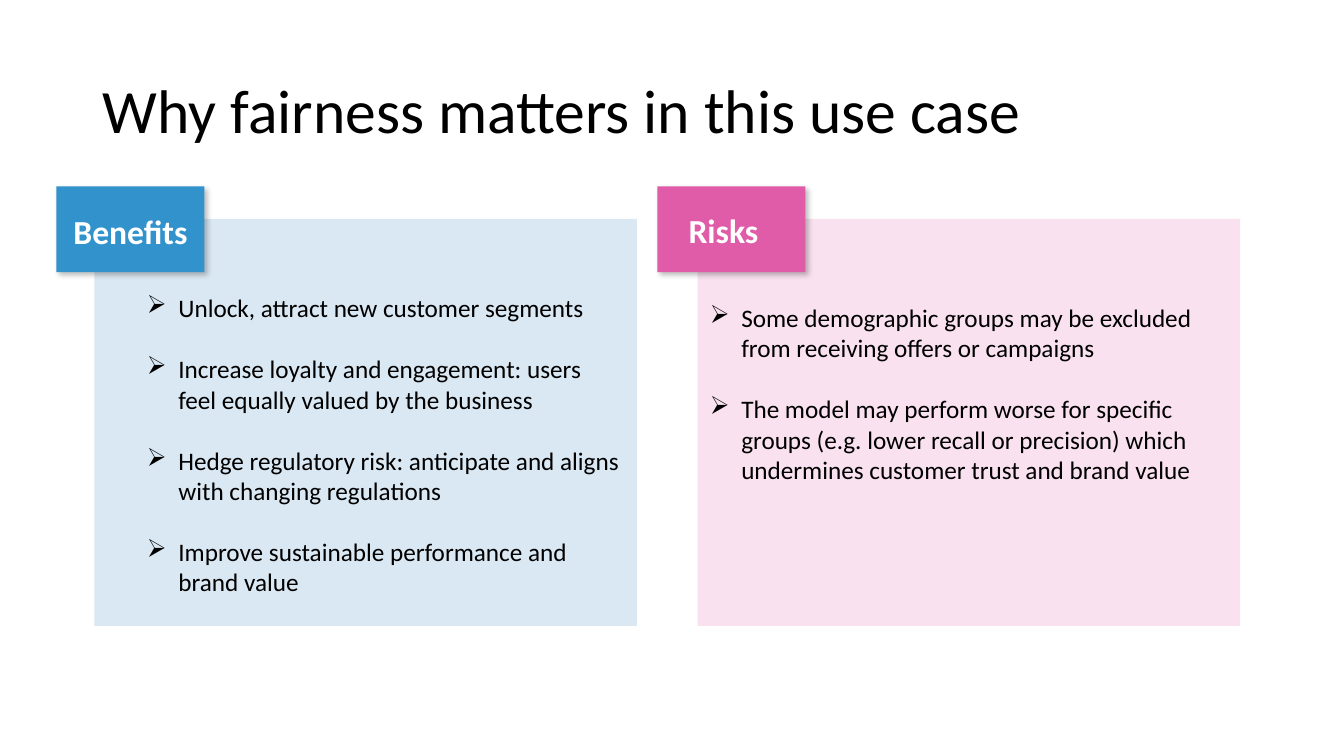
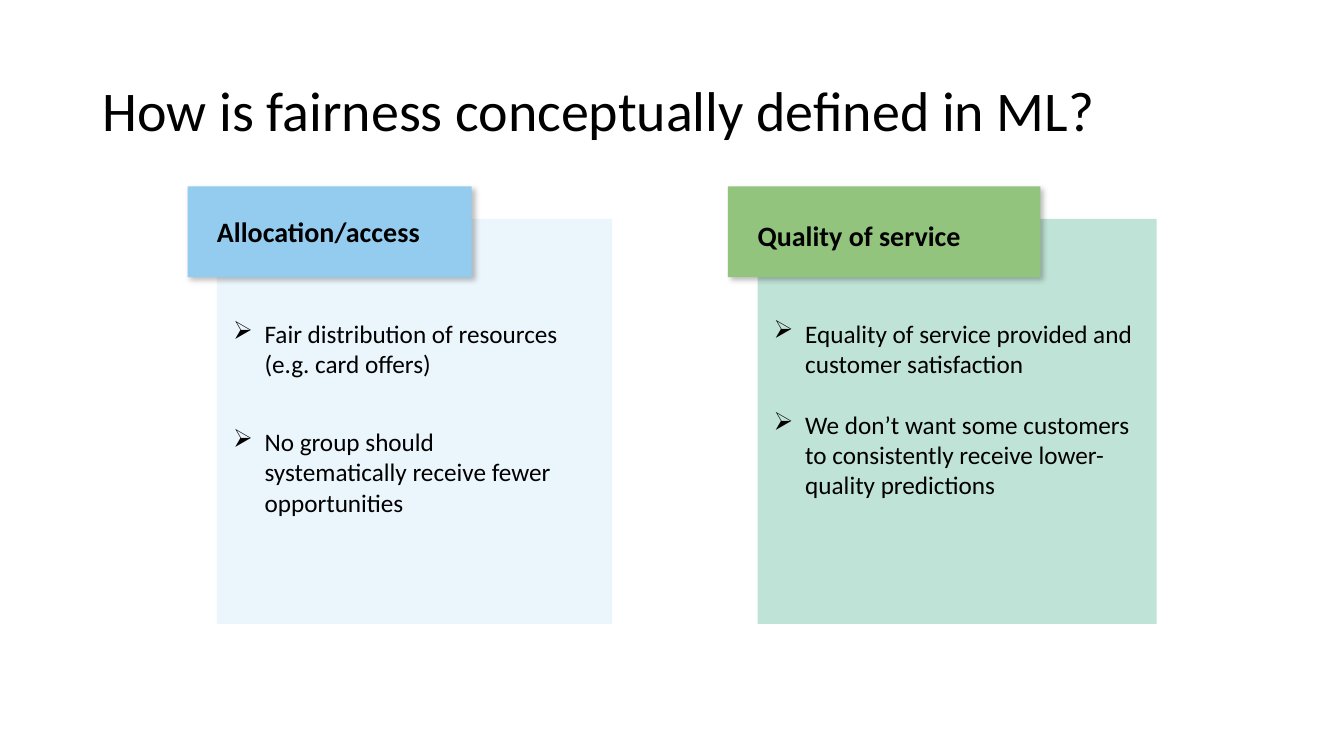
from dataclasses import dataclass

from lxml.etree import SubElement
from pptx import Presentation
from pptx.dml.color import RGBColor
from pptx.enum.shapes import MSO_SHAPE
from pptx.enum.text import MSO_ANCHOR, MSO_AUTO_SIZE, PP_ALIGN
from pptx.oxml.ns import qn
from pptx.util import Pt

FONT = "Calibri"
BLACK, WHITE = "000000", "FFFFFF"
TITLE_BOX = (66.2, 28.8, 845, 104.4)
TAB_TOP, PANEL_TOP = 133.2, 156.3
BULLET_INDENT = 22.5
TITLE_FRAME = {"word_wrap": True, "auto_size": MSO_AUTO_SIZE.NONE,
               "vertical_anchor": MSO_ANCHOR.MIDDLE}
TITLE_PARAGRAPH = {"alignment": PP_ALIGN.LEFT, "line_spacing": 0.9}


@dataclass
class Column:
    label: str
    label_color: str
    label_size: int
    label_offset: tuple
    tab_color: str
    tab_box: tuple
    panel_color: str
    panel_alpha: int
    panel_box: tuple
    points_box: tuple
    points_gap: int
    points: list


def color(hex_value):
    return RGBColor.from_string(hex_value)


def apply(target, values):
    for name, value in values.items():
        setattr(target, name, value)


def style_font(paragraph, size, hex_value=BLACK, bold=False):
    apply(paragraph.font, {"name": FONT, "size": Pt(size), "bold": bold})
    paragraph.font.color.rgb = color(hex_value)


def add_rectangle(slide, box, hex_value, alpha=100):
    rectangle = slide.shapes.add_shape(MSO_SHAPE.RECTANGLE, *map(Pt, box))
    rectangle.fill.solid()
    rectangle.fill.fore_color.rgb = color(hex_value)
    rectangle.line.fill.background()
    rectangle.shadow.inherit = False
    if alpha < 100:
        fill_color = rectangle._element.spPr.find(".//" + qn("a:srgbClr"))
        SubElement(fill_color, qn("a:alpha"), val=str(alpha * 1000))
    return rectangle


def add_shadow(rectangle):
    effects = rectangle._element.spPr.find(qn("a:effectLst"))
    shadow = SubElement(effects, qn("a:outerShdw"), blurRad=str(Pt(4)),
                        dist=str(Pt(3)), dir=str(45 * 60000),
                        algn="tl", rotWithShape="0")
    shadow_color = SubElement(shadow, qn("a:srgbClr"), val=BLACK)
    SubElement(shadow_color, qn("a:alpha"), val="25000")


def add_frame(slide, box, side=0, vertical=0):
    frame = slide.shapes.add_textbox(*map(Pt, box)).text_frame
    apply(frame, {"word_wrap": True,
                  "margin_left": Pt(side), "margin_right": Pt(side),
                  "margin_top": Pt(vertical), "margin_bottom": Pt(vertical)})
    return frame


def add_bullet(paragraph):
    properties = paragraph._p.get_or_add_pPr()
    properties.set("marL", str(Pt(BULLET_INDENT)))
    properties.set("indent", str(-Pt(BULLET_INDENT)))
    bullet_color = SubElement(properties, qn("a:buClr"))
    SubElement(bullet_color, qn("a:srgbClr"), val=BLACK)
    SubElement(properties, qn("a:buChar"), char="➢")


def add_points(slide, box, points, gap):
    frame = add_frame(slide, box, side=11.5, vertical=8.6)
    for index, point in enumerate(points):
        paragraph = frame.add_paragraph() if index else frame.paragraphs[0]
        paragraph.text = point
        add_bullet(paragraph)
        if index:
            paragraph.space_before = Pt(gap)
        style_font(paragraph, 18)


def add_column(slide, left, column):
    panel_width, panel_height = column.panel_box
    add_rectangle(slide, (left, PANEL_TOP, panel_width, panel_height),
                  column.panel_color, column.panel_alpha)

    shift, tab_width, tab_height = column.tab_box
    tab_left = left - shift
    add_shadow(add_rectangle(
        slide, (tab_left, TAB_TOP, tab_width, tab_height), column.tab_color))

    label_x, label_y, label_width = column.label_offset
    label = add_frame(slide, (tab_left + label_x, TAB_TOP + label_y,
                              label_width, column.label_size * 1.2))
    label.text = column.label
    style_font(label.paragraphs[0], column.label_size,
               column.label_color, bold=True)

    points_x, points_y, points_width, points_height = column.points_box
    add_points(slide, (left + points_x, PANEL_TOP + points_y,
                       points_width, points_height),
               column.points, column.points_gap)


def add_title(slide, text, size):
    title = slide.shapes.title
    apply(title, dict(zip(("left", "top", "width", "height"),
                          map(Pt, TITLE_BOX))))
    frame = title.text_frame
    apply(frame, TITLE_FRAME)
    frame.text = text
    apply(frame.paragraphs[0], TITLE_PARAGRAPH)
    style_font(frame.paragraphs[0], size)


def add_comparison(deck, title, title_size, columns):
    slide = deck.slides.add_slide(deck.slide_layouts[5])
    add_title(slide, title, title_size)
    for left, column in columns:
        add_column(slide, left, column)


BENEFITS = Column(
    label="Benefits", label_color=WHITE, label_size=24,
    label_offset=(12.2, 17.3, 343.4),
    tab_color="3292CC", tab_box=(27.2, 105.8, 61.2),
    panel_color="9AC0DE", panel_alpha=36, panel_box=(387.4, 290.9),
    points_box=(25.9, 44.2, 361.4, 269), points_gap=22,
    points=["Unlock, attract new customer segments",
            "Increase loyalty and engagement: users feel equally valued "
            "by the business",
            "Hedge regulatory risk: anticipate and aligns with changing "
            "regulations",
            "Improve sustainable performance and brand value"])

RISKS = Column(
    label="Risks", label_color=WHITE, label_size=24,
    label_offset=(22.3, 16.8, 343.4),
    tab_color="E05CA8", tab_box=(28.8, 105.8, 61.2),
    panel_color="E05CA8", panel_alpha=18, panel_box=(387.4, 290.9),
    points_box=(-2.9, 51.1, 391, 168), points_gap=22,
    points=["Some demographic groups may be excluded from receiving offers "
            "or campaigns",
            "The model may perform worse for specific groups (e.g. lower "
            "recall or precision) which undermines customer trust and "
            "brand value"])

ALLOCATION = Column(
    label="Allocation/access", label_color=BLACK, label_size=20,
    label_offset=(21, 20.2, 250.6),
    tab_color="93CCEF", tab_box=(21, 203, 64.8),
    panel_color="EBF5FC", panel_alpha=100, panel_box=(282.2, 289.4),
    points_box=(0, 62.6, 263.5, 160), points_gap=34,
    points=["Fair distribution of resources (e.g. card offers)",
            "No group should systematically receive fewer opportunities"])

QUALITY = Column(
    label="Quality of service", label_color=BLACK, label_size=20,
    label_offset=(21.2, 22.6, 250.6),
    tab_color="93C47D", tab_box=(21.2, 223.2, 64.8),
    panel_color="BFE3D6", panel_alpha=100, panel_box=(285, 289.4),
    points_box=(0, 62.2, 285, 217), points_gap=22,
    points=["Equality of service provided and customer satisfaction",
            "We don’t want some customers to consistently receive "
            "lower-quality predictions"])


def main():
    deck = Presentation()
    apply(deck, {"slide_width": Pt(960), "slide_height": Pt(540)})
    add_comparison(deck, "Why fairness matters in this use case", 44,
                   [(498.4, RISKS), (67.5, BENEFITS)])
    add_comparison(deck, "How is fairness conceptually defined in ML?", 40,
                   [(155, ALLOCATION), (541.2, QUALITY)])
    deck.save("out.pptx")


if __name__ == "__main__":
    main()
